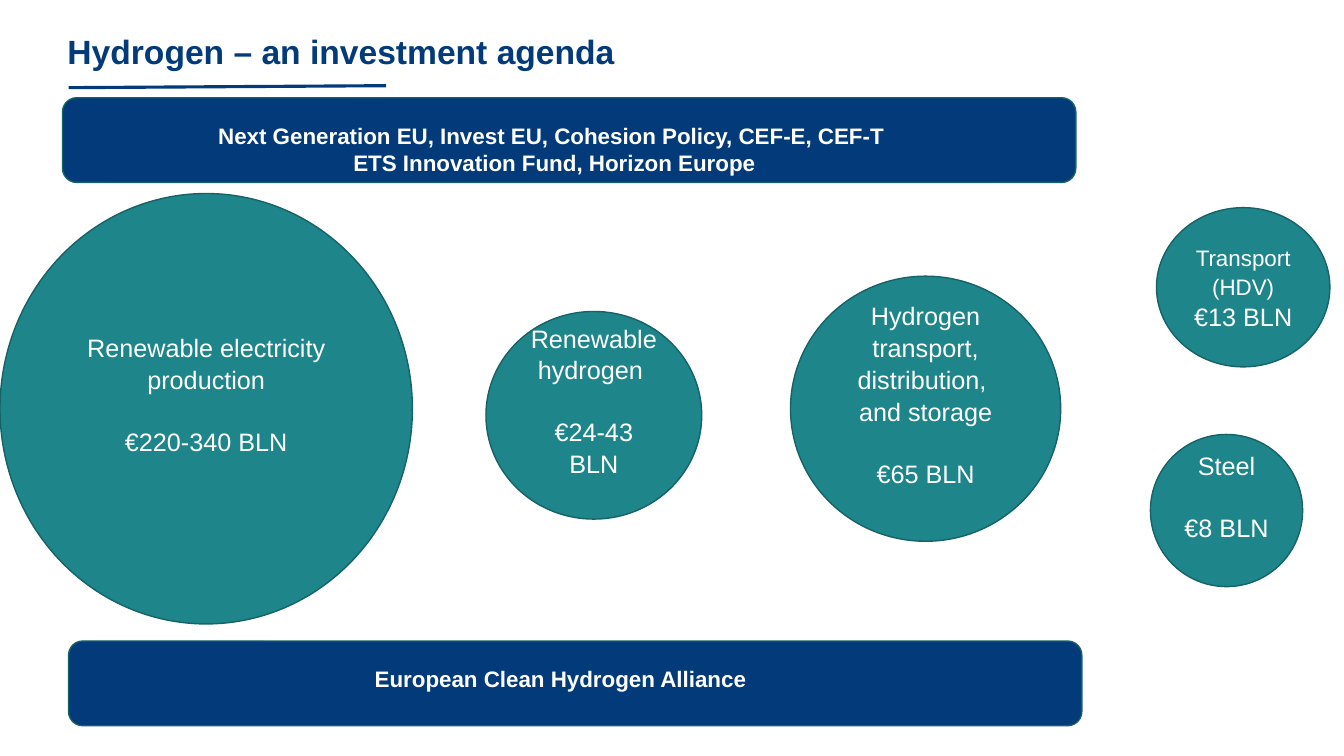
from dataclasses import dataclass

from lxml import etree
from pptx import Presentation
from pptx.dml.color import RGBColor
from pptx.enum import shapes, text
from pptx.oxml.ns import qn
from pptx.util import Inches, Pt

NAVY = RGBColor(0x02, 0x3A, 0x7A)
TEAL = RGBColor(0x1E, 0x85, 0x8B)
DARK_TEAL = RGBColor(0x16, 0x62, 0x67)
WHITE = RGBColor(0xFF, 0xFF, 0xFF)

OVAL = shapes.MSO_SHAPE.OVAL
RECT = shapes.MSO_SHAPE.RECTANGLE
ROUND = shapes.MSO_SHAPE.ROUNDED_RECTANGLE
LABEL_GAP = Pt(21.6)
LABEL_LIFT = 0.3  # raises the label above the middle of its circle


@dataclass(frozen=True)
class Box:
    left: float
    top: float
    width: float
    height: float

    def lengths(self) -> list[int]:
        return [Inches(v) for v in (self.left, self.top, self.width, self.height)]


@dataclass(frozen=True)
class Investment:
    box: Box
    label: tuple[str, ...]
    amount: str
    label_size: int = 18
    spaced: bool = True


@dataclass(frozen=True)
class Programme:
    left: float
    top: float
    lines: tuple[str, ...]
    text_height: float


INVESTMENTS = [
    Investment(Box(7.84, 2.74, 2.68, 2.63),
               ("Hydrogen transport,", "distribution, ", "and storage"), "€65 BLN"),
    Investment(Box(0, 1.92, 4.09, 4.27),
               ("Renewable electricity production",), "€220-340 BLN"),
    Investment(Box(4.82, 3.09, 2.14, 2.06), ("Renewable hydrogen ",), "€24-43 BLN"),
    Investment(Box(11.41, 4.31, 1.51, 1.51), ("Steel",), "€8 BLN"),
    Investment(Box(11.47, 2.06, 1.72, 1.58), ("Transport (HDV)",), "€13 BLN",
               label_size=16, spaced=False),
]
PROGRAMMES = [
    Programme(0.68, 6.36, ("European Clean Hydrogen Alliance",), 0.42),
    Programme(0.62, 0.97,
              ("Next Generation EU, Invest EU, Cohesion Policy, CEF-E, CEF-T ",
               "ETS Innovation Fund, Horizon Europe"), 0.64),
]


def add_filled(parent, kind, box: Box, fill: RGBColor, outlined: bool = True):
    sp = parent.add_shape(kind, *box.lengths())
    sp.shadow.inherit = False
    sp.fill.solid()
    sp.fill.fore_color.rgb = fill
    if outlined:
        sp.line.color.rgb = DARK_TEAL
        sp.line.width = Pt(1)
    else:
        sp.line.fill.background()
    return sp


def add_line(tf, index: int, words: str, size: int, color: RGBColor = WHITE,
             bold: bool = False, align=text.PP_ALIGN.CENTER):
    """Write one paragraph, reusing the frame's first one."""
    p = tf.paragraphs[0] if index == 0 else tf.add_paragraph()
    p.alignment = align
    r = p.add_run()
    r.text = words
    for name, value in {"name": "Arial", "size": Pt(size), "bold": bold}.items():
        setattr(r.font, name, value)
    r.font.color.rgb = color
    return p


def add_title(s) -> None:
    tf = s.shapes.add_textbox(*Box(0.57, 0.26, 12.19, 0.5).lengths()).text_frame
    tf.word_wrap = True
    add_line(tf, 0, "Hydrogen – an investment agenda", 24, NAVY, True,
             text.PP_ALIGN.LEFT)
    rule = s.shapes.add_connector(
        shapes.MSO_CONNECTOR.STRAIGHT, *[Inches(v) for v in (0.68, 0.87, 3.83, 0.85)])
    rule.line.color.rgb = NAVY
    rule.line.width = Pt(2.25)
    etree.SubElement(rule._element.spPr, qn("a:effectLst"))


def add_investment(s, item: Investment) -> None:
    tf = add_filled(s.shapes, OVAL, item.box, TEAL).text_frame
    tf.word_wrap = True
    tf.vertical_anchor = text.MSO_ANCHOR.MIDDLE
    for i, words in enumerate(item.label):
        add_line(tf, i, words, item.label_size).line_spacing = 1.05
    amount = add_line(tf, len(item.label), item.amount, 18)
    amount.line_spacing = 1.05
    if item.spaced:
        amount.space_before = LABEL_GAP
        tf.margin_bottom = Inches(0.05 + LABEL_LIFT)


def add_programme(s, item: Programme) -> None:
    group = s.shapes.add_group_shape().shapes
    add_filled(group, ROUND, Box(item.left, item.top, 10.05, 0.84), NAVY)
    caption = Box(item.left + 0.48, item.top + 0.19, 8.8, item.text_height)
    tf = add_filled(group, RECT, caption, NAVY, outlined=False).text_frame
    tf.word_wrap = True
    tf.vertical_anchor = text.MSO_ANCHOR.TOP
    for i, words in enumerate(item.lines):
        add_line(tf, i, words, 16, bold=True)


def main() -> None:
    prs = Presentation()
    prs.slide_width, prs.slide_height = Inches(13.33), Inches(7.5)
    s = prs.slides.add_slide(prs.slide_layouts[6])
    add_title(s)
    for investment in INVESTMENTS:
        add_investment(s, investment)
    for programme in PROGRAMMES:
        add_programme(s, programme)
    prs.save("out.pptx")


if __name__ == "__main__":
    main()
